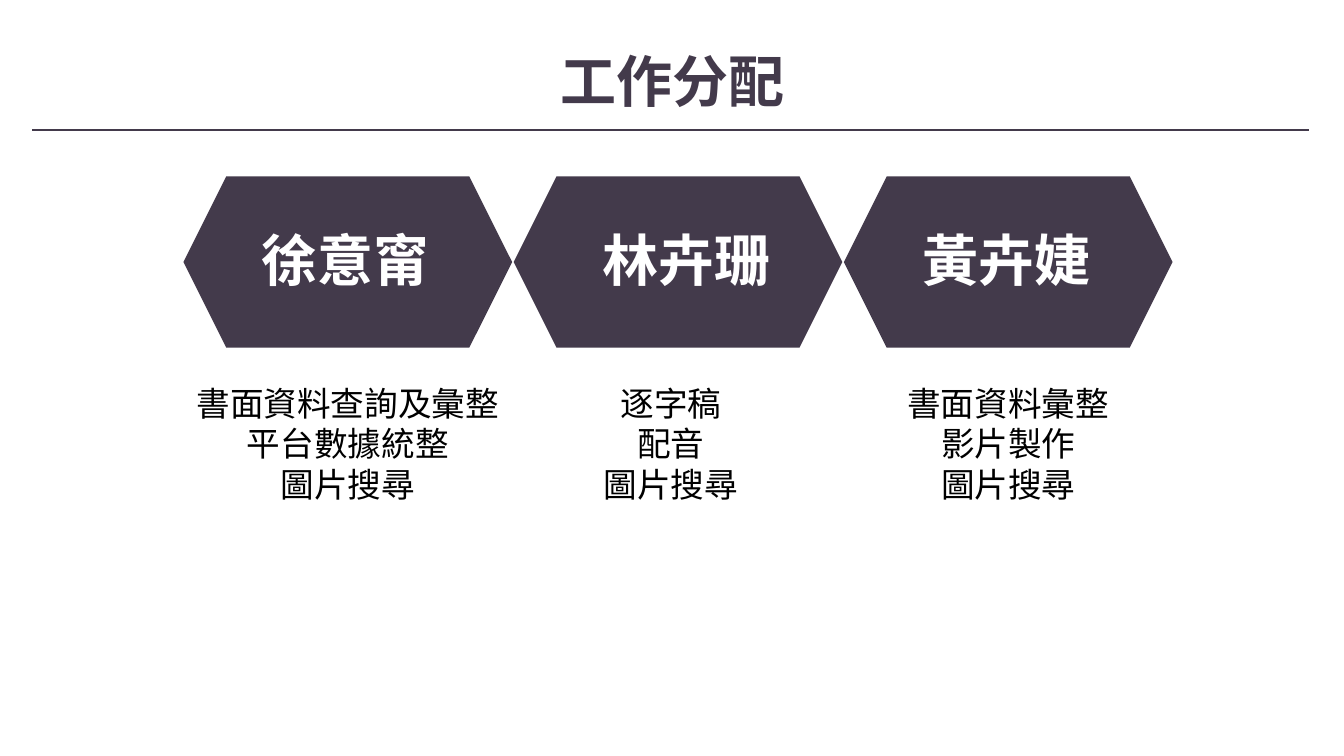
from dataclasses import dataclass

import pptx
import pptx.dml.color
import pptx.enum.shapes
import pptx.enum.text
import pptx.oxml.ns
import pptx.util
from lxml import etree

Inches = pptx.util.Inches
ALIGN = pptx.enum.text.PP_ALIGN
ANCHOR = pptx.enum.text.MSO_ANCHOR


@dataclass(frozen=True)
class Theme:
    accent: str = "433A4B"
    white: str = "FFFFFF"
    black: str = "000000"
    title_font: str = "Noto Sans CJK JP"
    name_font: str = "Roboto Condensed"
    body_font: str = "Calibri"
    heading_size: int = 40
    body_size: int = 24
    rule_width: float = 0.75


THEME = Theme()

# Name, shift of the name, shift of the task list, tasks
MEMBERS = [
    ("徐意甯", 0, 0, ["書面資料查詢及彙整", "平台數據統整", "圖片搜尋"]),
    ("林卉珊", 0.1, -0.07, ["逐字稿", "配音", "圖片搜尋"]),
    ("黃卉婕", 0, 0, ["書面資料彙整", "影片製作", "圖片搜尋"]),
]


def rgb(color):
    return pptx.dml.color.RGBColor.from_string(color)


def add_text(slide, box, lines, font, size, color, bold=False, align=ALIGN.CENTER, wrap=True):
    """Add a text box with one paragraph per line and return its text frame."""
    tf = slide.shapes.add_textbox(*map(Inches, box)).text_frame
    tf.word_wrap = wrap
    tf.auto_size = pptx.enum.text.MSO_AUTO_SIZE.SHAPE_TO_FIT_TEXT
    for i, line in enumerate(lines):
        p = tf.paragraphs[0] if i == 0 else tf.add_paragraph()
        p.text = line
        p.alignment = align
        p.font.name = font
        p.font.size = pptx.util.Pt(size)
        p.font.bold = bold
        p.font.color.rgb = rgb(color)
    return tf


def add_header(slide, left, top, width, height):
    """Centre the title above a rule that runs along the bottom of the box."""
    title_width = 5.34
    title_left = left + (width - title_width) / 2 + 0.02
    tf = add_text(slide, (title_left, top, title_width, 0.67), ["工作分配"],
                  THEME.title_font, THEME.heading_size, THEME.accent, bold=True)
    tf.vertical_anchor = ANCHOR.MIDDLE
    tf.margin_left = tf.margin_right = tf.margin_top = tf.margin_bottom = 0

    rule_y = Inches(top + height)
    rule = slide.shapes.add_connector(pptx.enum.shapes.MSO_CONNECTOR.STRAIGHT,
                                      Inches(left), rule_y, Inches(left + width), rule_y)
    rule.line.color.rgb = rgb(THEME.accent)
    rule.line.width = pptx.util.Pt(THEME.rule_width)
    etree.SubElement(rule._element.spPr, pptx.oxml.ns.qn("a:effectLst"))


def add_member(slide, left, top, width, name, name_shift, tasks_shift, tasks):
    """Place a hexagon with the member's name and the task list below it."""
    hexagon = slide.shapes.add_shape(pptx.enum.shapes.MSO_SHAPE.HEXAGON, Inches(left),
                                     Inches(top), Inches(width), Inches(1.7))
    hexagon.shadow.inherit = False
    hexagon.fill.solid()
    hexagon.fill.fore_color.rgb = rgb(THEME.accent)
    hexagon.line.fill.background()
    add_text(slide, (left + 0.68 + name_shift, top + 0.44, 1.88, 0.77), [name],
             THEME.name_font, THEME.heading_size, THEME.white, bold=True,
             align=ALIGN.LEFT, wrap=False)
    add_text(slide, (left + tasks_shift, top + 2, width, 1.31), tasks,
             THEME.body_font, THEME.body_size, THEME.black)


def add_members(slide, left, top, width):
    """Spread the members evenly across the given width."""
    member_width = 3.26
    pitch = (width - member_width) / (len(MEMBERS) - 1)
    for i, member in enumerate(MEMBERS):
        add_member(slide, left + i * pitch, top, member_width, *member)


def main():
    prs = pptx.Presentation()
    prs.slide_width, prs.slide_height = Inches(13.33), Inches(7.5)
    slide = prs.slides.add_slide(prs.slide_layouts[6])
    add_header(slide, 0.32, 0.46, 12.66, 0.83)
    add_members(slide, 1.82, 1.75, 9.81)
    prs.save("out.pptx")


if __name__ == "__main__":
    main()
